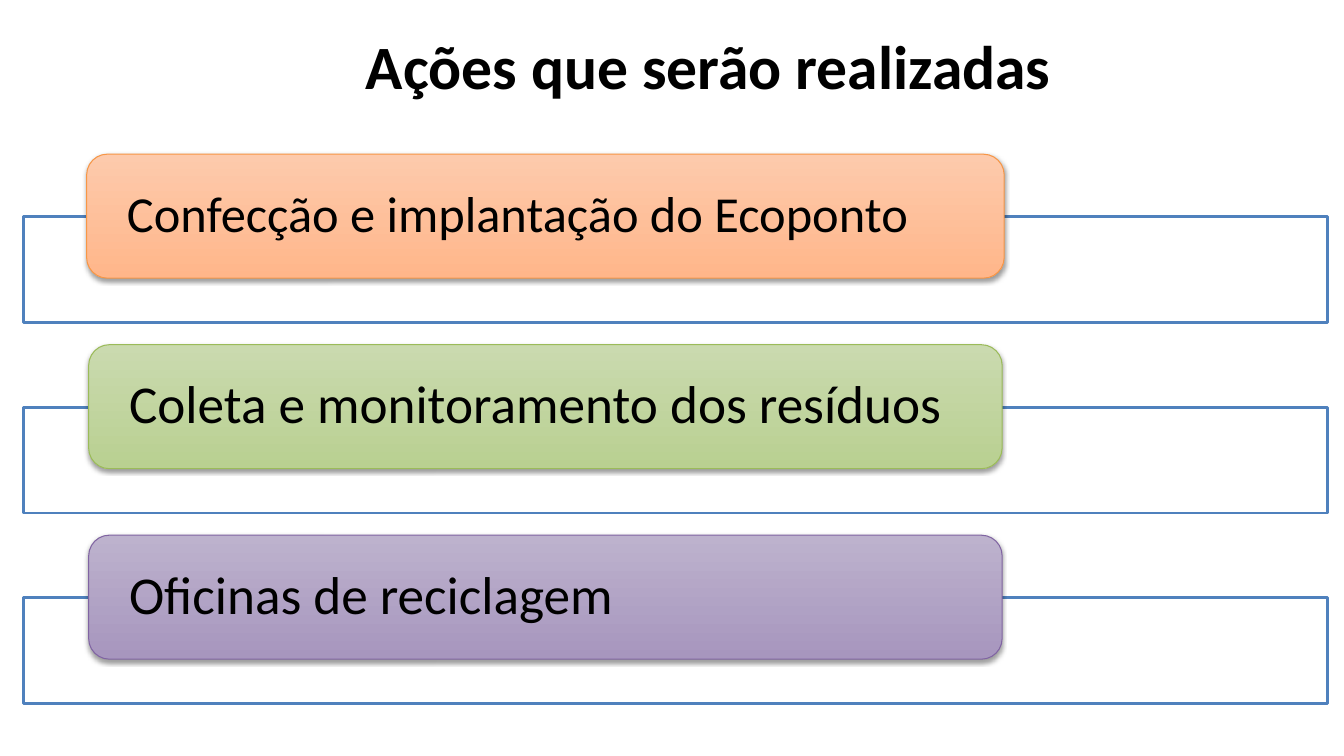
from lxml import etree
from pptx import Presentation
from pptx.dml.color import RGBColor
from pptx.enum import shapes, text
from pptx.oxml import ns
from pptx.util import Inches, Pt


def rgb(value):
    return RGBColor.from_string(value)


def sub(parent, tag, **attrs):
    return etree.SubElement(parent, ns.qn(tag), attrs)


class ActionSlide:
    font = "Calibri"
    ink = "000000"
    panel_line = "4F81BD"

    def __init__(self, prs):
        self.s = prs.slides.add_slide(prs.slide_layouts[5])

    def set_text(self, sp, words, size, bold, align, margins):
        tf = sp.text_frame
        tf.word_wrap = True
        tf.auto_size = text.MSO_AUTO_SIZE.NONE
        tf.vertical_anchor = text.MSO_ANCHOR.MIDDLE
        tf.margin_left = tf.margin_right = Inches(margins[0])
        tf.margin_top = tf.margin_bottom = Inches(margins[1])
        p = tf.paragraphs[0]
        p.text = words
        p.alignment = align
        p.font.name = self.font
        p.font.size = Pt(size)
        p.font.bold = bold
        p.font.color.rgb = rgb(self.ink)
        return p

    def title(self, words):
        sp = self.s.shapes.title
        sp.left, sp.top = Inches(1.64), Inches(0.28)
        sp.width, sp.height = Inches(10.78), Inches(0.72)
        self.set_text(sp, words, 44, True, text.PP_ALIGN.CENTER, (0.1, 0.05))

    def shape(self, kind, left, top, width, height, line, weight):
        sp = self.s.shapes.add_shape(
            kind, Inches(left), Inches(top), Inches(width), Inches(height))
        sp.line.color.rgb = rgb(line)
        sp.line.width = Pt(weight)
        sp.shadow.inherit = False
        return sp

    def panel(self, top):
        sp = self.shape(shapes.MSO_SHAPE.RECTANGLE,
                        0.23, top, 12.94, 1.05, self.panel_line, 2)
        sp.fill.solid()
        sp.fill.fore_color.rgb = rgb("FFFFFF")
        color = sp._element.spPr.find(ns.qn("a:solidFill"))[0]
        sub(color, "a:alpha", val="90000")

    def action(self, words, left, top, width, size, line, colors):
        sp = self.shape(shapes.MSO_SHAPE.ROUNDED_RECTANGLE,
                        left, top, width, 1.23, line, 0.75)
        sp.fill.gradient()
        sp.fill.gradient_angle = 270
        for stop, position, color in zip(sp.fill.gradient_stops, (0, 1), colors):
            stop.position = position
            stop.color.rgb = rgb(color)
        self.soft_shadow(sp)
        p = self.set_text(sp, words, size, False, text.PP_ALIGN.LEFT, (0.34, 0.06))
        p.line_spacing = 0.9

    def soft_shadow(self, sp):
        effects = sp._element.spPr.find(ns.qn("a:effectLst"))
        shadow = sub(effects, "a:outerShdw", blurRad=str(Pt(3.1)),
                     dist=str(Pt(1.6)), dir="5400000", rotWithShape="0")
        color = sub(shadow, "a:srgbClr", val="000000")
        sub(color, "a:alpha", val="38000")


ACTIONS = [
    ("Confecção e implantação do Ecoponto", 0.86, 9.1, 36,
     "F79646", ("FDCAAC", "FFB68A")),
    ("Coleta e monitoramento dos resíduos", 0.88, 9.06, 38,
     "9BBB59", ("CADAAF", "B9D091")),
    ("Oficinas de reciclagem", 0.88, 9.06, 38,
     "8064A2", ("BDB2CD", "A796BE")),
]
FIRST_TOP, PITCH, PANEL_DROP = 1.53, 1.89, 0.62


def main():
    prs = Presentation()
    prs.slide_width, prs.slide_height = Inches(13.33), Inches(7.5)
    slide = ActionSlide(prs)
    slide.title("Ações que serão realizadas")
    for i, (words, left, width, size, line, colors) in enumerate(ACTIONS):
        top = FIRST_TOP + i * PITCH
        slide.panel(top + PANEL_DROP)
        slide.action(words, left, top, width, size, line, colors)
    prs.save("out.pptx")


if __name__ == "__main__":
    main()
